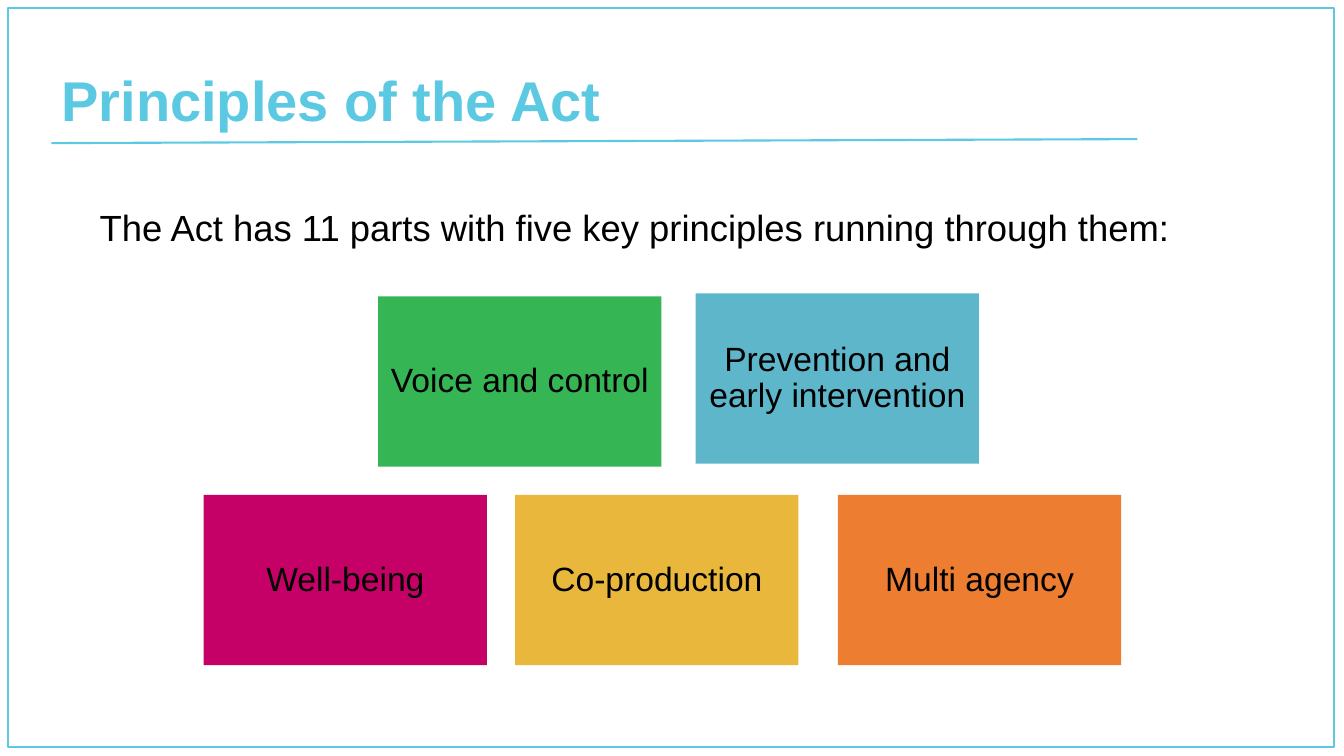
"""Build the slide on the five principles of the Act."""
from lxml import etree
from pptx import Presentation
from pptx.dml.color import RGBColor
from pptx.enum import shapes, text
from pptx.util import Inches, Pt

SKY = RGBColor(0x5C, 0xC9, 0xE3)
BLACK = RGBColor(0, 0, 0)
GREEN = RGBColor(0x36, 0xB5, 0x55)
TEAL = RGBColor(0x5D, 0xB6, 0xC9)
PINK = RGBColor(0xC5, 0x00, 0x67)
GOLD = RGBColor(0xE9, 0xB7, 0x3C)
ORANGE = RGBColor(0xED, 0x7D, 0x31)

TITLE = "Principles of the Act"
INTRO = "The Act has 11 parts with five key principles running through them:"
CARDS = [
    ("Voice and control", GREEN, 3.75, 2.94),
    ("Prevention and early intervention", TEAL, 6.9, 2.91),
    ("Well-being", PINK, 2.02, 4.91),
    ("Co-production", GOLD, 5.11, 4.91),
    ("Multi agency", ORANGE, 8.31, 4.91),
]
CARD_W, CARD_H = 2.81, 1.69


def write(shape, words, size, color=BLACK, bold=False,
          align=text.PP_ALIGN.LEFT, anchor=text.MSO_ANCHOR.TOP, inset=None):
    """Put one formatted paragraph into a shape."""
    frame = shape.text_frame
    frame.word_wrap = True
    frame.auto_size = text.MSO_AUTO_SIZE.NONE
    frame.vertical_anchor = anchor
    if inset is not None:
        frame.margin_left = frame.margin_right = Inches(inset)
        frame.margin_top = frame.margin_bottom = Inches(inset)
    para = frame.paragraphs[0]
    para.alignment = align
    para.line_spacing = 0.9
    run = para.add_run()
    run.text = words
    run.font.name = "Arial"
    run.font.size = Pt(size)
    run.font.bold = bold
    run.font.color.rgb = color


def add_box(slide, left, top, width, height):
    """Add a rectangle without a shadow."""
    box = slide.shapes.add_shape(
        shapes.MSO_SHAPE.RECTANGLE,
        Inches(left), Inches(top), Inches(width), Inches(height))
    box.shadow.inherit = False
    return box


def add_frame(slide):
    """Add the rule under the title and the border."""
    rule = slide.shapes.add_connector(
        shapes.MSO_CONNECTOR.STRAIGHT,
        Inches(0.51), Inches(1.42), Inches(11.28), Inches(1.38))
    props = rule.line._get_or_add_ln().getparent()
    etree.SubElement(
        props, "{http://schemas.openxmlformats.org/drawingml/2006/main}effectLst")
    border = add_box(slide, 0.08, 0.08, 13.15, 7.33)
    border.fill.background()
    for item, width in ((rule, 1.5), (border, 1)):
        item.line.color.rgb = SKY
        item.line.width = Pt(width)


def main():
    """Build and save the deck."""
    deck = Presentation()
    deck.slide_width, deck.slide_height = Inches(13.33), Inches(7.5)
    slide = deck.slides.add_slide(deck.slide_layouts[5])
    add_frame(slide)

    title = slide.shapes.title
    title.left, title.top = Inches(0.51), Inches(0.29)
    title.width, title.height = Inches(7.8), Inches(1.09)
    write(title, TITLE, 40, color=SKY, bold=True, anchor=text.MSO_ANCHOR.BOTTOM)

    intro = slide.shapes.add_textbox(
        Inches(0.89), Inches(2.04), Inches(11.5), Inches(0.57))
    write(intro, INTRO, 26)

    for words, color, left, top in CARDS:
        card = add_box(slide, left, top, CARD_W, CARD_H)
        card.fill.solid()
        card.fill.fore_color.rgb = color
        card.line.fill.background()
        write(card, words, 24, align=text.PP_ALIGN.CENTER,
              anchor=text.MSO_ANCHOR.MIDDLE, inset=0.1)

    deck.save("out.pptx")


if __name__ == "__main__":
    main()
